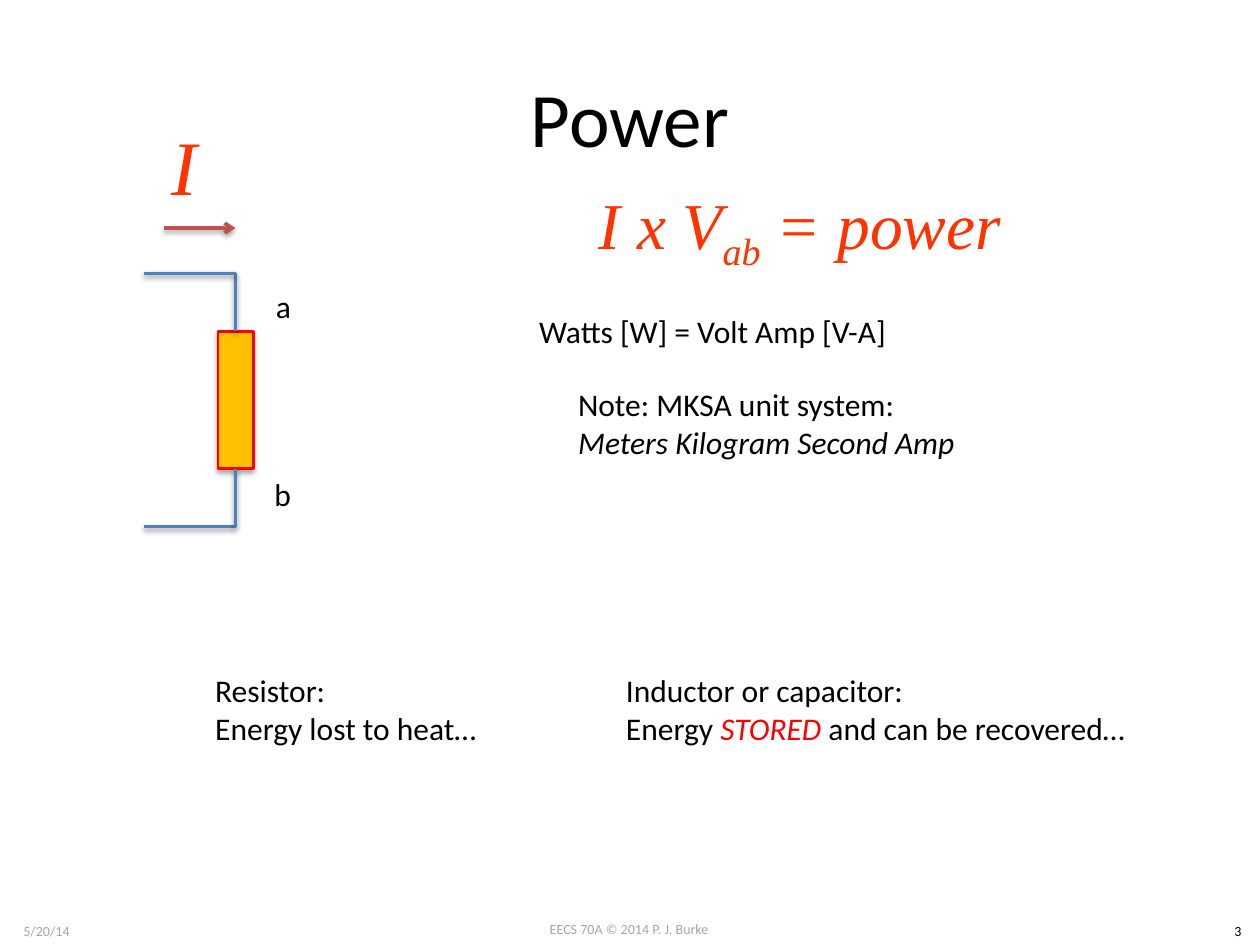
from typing import NamedTuple

from lxml import etree
from pptx import Presentation
from pptx.dml.color import RGBColor
from pptx.enum.shapes import MSO_CONNECTOR as Connector, MSO_SHAPE as Shape
from pptx.enum.text import MSO_ANCHOR as Anchor, MSO_AUTO_SIZE as AutoSize, PP_ALIGN as Align
from pptx.oxml.ns import qn
from pptx.util import Inches, Pt

BLACK = RGBColor(0x00, 0x00, 0x00)
GRAY = RGBColor(0xA6, 0xA6, 0xA6)
RED = RGBColor(0xFF, 0x00, 0x00)
ORANGE_RED = RGBColor(0xFF, 0x33, 0x00)
AMBER = RGBColor(0xFF, 0xC0, 0x00)
WIRE_BLUE = RGBColor(0x4F, 0x81, 0xBD)
CURRENT_RED = RGBColor(0xC0, 0x50, 0x4D)
SANS, SERIF = "Calibri", "Times New Roman"


class Piece(NamedTuple):
    """A stretch of text; None keeps the format of its text box."""
    text: str
    color: RGBColor | None = None
    italic: bool | None = None
    baseline: int = 0
    break_before: bool = False


class Wire(NamedTuple):
    start: tuple[float, float]
    end: tuple[float, float]
    resistor_side: int | None = None  # connection site joined by the end


def add_text(slide, box, *paragraphs, size=18, font=SANS, color=BLACK, italic=False,
             align=Align.LEFT, anchor=Anchor.TOP, wrap=False, grow=True) -> None:
    """Write paragraphs, each a string or a list of pieces."""
    frame = slide.shapes.add_textbox(*map(Inches, box)).text_frame
    frame.word_wrap = wrap
    frame.auto_size = AutoSize.SHAPE_TO_FIT_TEXT if grow else AutoSize.NONE
    frame.vertical_anchor = anchor
    for index, content in enumerate(paragraphs):
        paragraph = frame.add_paragraph() if index else frame.paragraphs[0]
        paragraph.alignment = align
        for piece in [Piece(content)] if isinstance(content, str) else content:
            if piece.break_before:
                paragraph.add_line_break()
            run = paragraph.add_run()
            run.text = piece.text
            run.font.name, run.font.size = font, Pt(size)
            run.font.color.rgb = piece.color or color
            run.font.italic = italic if piece.italic is None else piece.italic
            if piece.baseline:
                run._r.get_or_add_rPr().set("baseline", str(piece.baseline * 1000))


def add_shadow(shape, distance: float, opacity: int) -> None:
    """Cast a soft black shadow straight down."""
    effects = etree.SubElement(shape._element.spPr, qn("a:effectLst"))
    shadow = etree.SubElement(
        effects, qn("a:outerShdw"), blurRad=str(Pt(3.1)), dist=str(Pt(distance)),
        dir="5400000", rotWithShape="0")
    tint = etree.SubElement(shadow, qn("a:srgbClr"), val=str(BLACK))
    etree.SubElement(tint, qn("a:alpha"), val=str(opacity * 1000))


def add_line(slide, start: tuple[float, float], end: tuple[float, float],
             color: RGBColor, arrow: bool = False):
    line = slide.shapes.add_connector(
        Connector.STRAIGHT, *map(Inches, (*start, *end)))
    line.line.color.rgb = color
    line.line.width = Pt(2)
    if arrow:
        etree.SubElement(line.line._get_or_add_ln(), qn("a:tailEnd"), type="arrow")
    add_shadow(line, distance=1.6, opacity=38)
    return line


def add_circuit(slide) -> None:
    # Resistor
    left, top, width, height = 1.73, 2.63, 0.28, 1.09
    resistor = slide.shapes.add_shape(
        Shape.RECTANGLE, *map(Inches, (left, top, width, height)))
    resistor.fill.solid()
    resistor.fill.fore_color.rgb = AMBER
    resistor.line.color.rgb = RED
    resistor.line.width = Pt(1.5)
    add_shadow(resistor, distance=1.8, opacity=35)

    # Wires on both sides of it
    axis, lead, wire_left = left + width / 2, 0.46, 1.14
    bottom = top + height
    for wire in (
        Wire((wire_left, bottom + lead), (axis, bottom + lead)),
        Wire((axis, bottom + lead), (axis, bottom), 2),
        Wire((axis, top - lead), (axis, top), 0),
        Wire((wire_left, top - lead), (axis, top - lead)),
    ):
        line = add_line(slide, wire.start, wire.end, WIRE_BLUE)
        if wire.resistor_side is not None:
            line.end_connect(resistor, wire.resistor_side)

    # Current arrow
    add_line(slide, (1.3, 1.81), (axis, 1.81), CURRENT_RED, arrow=True)


def main() -> None:
    deck = Presentation()
    deck.slide_width, deck.slide_height = Inches(10), Inches(7.5)
    slide = deck.slides.add_slide(deck.slide_layouts[6])

    # Footer
    footer = dict(size=8, align=Align.CENTER, wrap=True)
    add_text(slide, (3.83, 7.26, 2.33, 0.24), "EECS 70A © 2014 P. J. Burke", color=GRAY, **footer)
    add_text(slide, (0, 7.27, 0.74, 0.24), "5/20/14", color=GRAY, **footer)
    add_text(slide, (9.65, 7.27, 0.35, 0.24), "3", **footer)

    # Title
    centered = dict(align=Align.CENTER, anchor=Anchor.MIDDLE, wrap=True, grow=False)
    add_text(slide, (0.5, 0.3, 9, 1.25), "Power", size=44, **centered)

    # Circuit and its terminals
    add_text(slide, (2.09, 2.23, 0.32, 0.4), "a")
    add_text(slide, (2.08, 3.72, 0.34, 0.4), "b")
    add_circuit(slide)

    # Formula
    formula = dict(font=SERIF, color=ORANGE_RED, italic=True, **centered)
    add_text(slide, (0.84, 0.8, 1.25, 1.01), "I", size=44, **formula)
    add_text(slide, (4.49, 1.31, 3.72, 1.01),
             [Piece("I x V"), Piece("ab", baseline=-25), Piece(" = power")],
             size=37.4, **formula)

    # Units
    add_text(slide, (4.18, 2.43, 3, 0.4), "Watts [W] = Volt Amp [V-A]")
    add_text(slide, (4.49, 3.01, 3.24, 0.71),
             [Piece("Note: MKSA unit system:"),
              Piece("Meters Kilogram Second Amp", italic=True, break_before=True)])

    # Where the energy goes
    add_text(slide, (1.61, 5.28, 2.31, 0.71), "Resistor:", "Energy lost to heat…")
    add_text(slide, (4.87, 5.28, 4.23, 0.71), "Inductor or capacitor:",
             [Piece("Energy "), Piece("STORED", color=RED, italic=True),
              Piece(" and can be recovered…")])

    deck.save("out.pptx")


if __name__ == "__main__":
    main()
